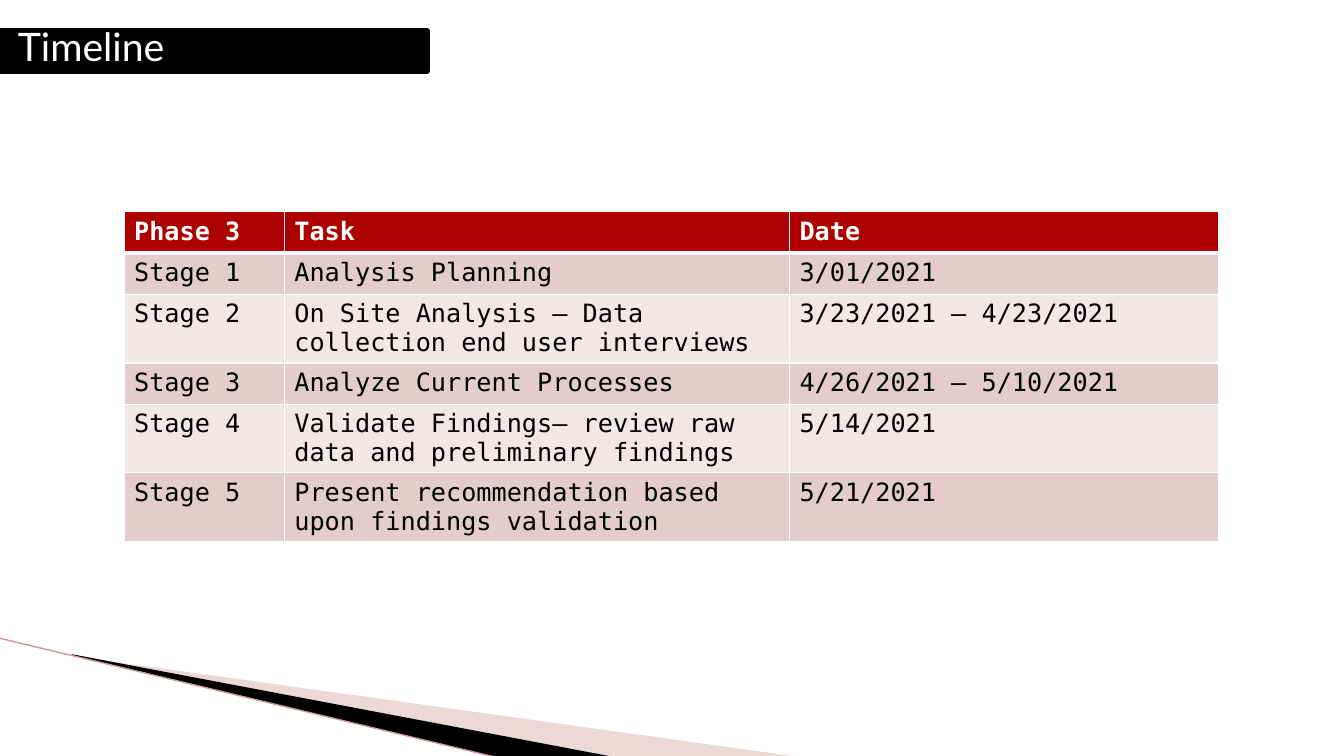
from lxml.etree import SubElement
from pptx import Presentation
from pptx.dml.color import RGBColor
from pptx.enum.shapes import MSO_CONNECTOR, MSO_SHAPE
from pptx.oxml.ns import qn
from pptx.util import Pt

TITLE = "Timeline"
ROWS = [
    ("Phase 3", "Task", "Date"),
    ("Stage 1", "Analysis Planning", "3/01/2021"),
    ("Stage 2", "On Site Analysis – Data collection end user interviews", "3/23/2021 – 4/23/2021"),
    ("Stage 3", "Analyze Current Processes", "4/26/2021 – 5/10/2021"),
    ("Stage 4", "Validate Findings– review raw data and preliminary findings", "5/14/2021"),
    ("Stage 5", "Present recommendation based upon findings validation", "5/21/2021"),
]
COLUMN_WIDTHS = [159, 501, 426]
ROW_HEIGHT = 41
TABLE_LEFT, TABLE_TOP = 123, 210
ROSE_WEDGE = [(73, 651), (793, 751), (608, 751), (73, 650)]
BLACK_WEDGE = [(71, 649), (609, 751), (496, 752), (72, 650)]
EDGE = [(-1, 633), (495, 752)]
COLORS = {
    "white": "FFFFFF",
    "black": "000000",
    "header": "AD0101",
    "odd": "E3CCCC",
    "even": "F1E7E7",
    "rose": "D29E9E",
    "edge": "CD9595",
}
SCALE = 9144


def px(length):
    return length * SCALE


def color(name):
    return RGBColor.from_string(COLORS[name])


def paint(shape, name):
    shape.shadow.inherit = False
    shape.fill.solid()
    shape.fill.fore_color.rgb = color(name)


def add_wedge(page, points, name):
    builder = page.shapes.build_freeform(*points[0], scale=SCALE)
    builder.add_line_segments(points[1:], close=True)
    wedge = builder.convert_to_shape()
    paint(wedge, name)
    wedge.line.fill.background()
    return wedge


def style_text(frame, size, font, name, bold=False):
    for para in frame.paragraphs:
        for span in para.runs:
            span.font.size = Pt(size)
            span.font.name = font
            span.font.bold = bold
            span.font.color.rgb = color(name)


def add_borders(cell, bottom):
    properties = cell._tc.get_or_add_tcPr()
    widths = {"a:lnL": 1, "a:lnR": 1, "a:lnT": 1, "a:lnB": bottom}
    for position, (tag, width) in enumerate(widths.items()):
        border = SubElement(properties, qn(tag), w=str(Pt(width)))
        fill = SubElement(border, qn("a:solidFill"))
        SubElement(fill, qn("a:srgbClr"), val=COLORS["white"])
        properties.insert(position, border)


def add_decoration(page):
    rose = add_wedge(page, ROSE_WEDGE, "rose")
    tone = rose.fill._xPr.find(qn("a:solidFill"))[0]
    SubElement(tone, qn("a:alpha"), val="40000")
    add_wedge(page, BLACK_WEDGE, "black")
    (x1, y1), (x2, y2) = EDGE
    edge = page.shapes.add_connector(MSO_CONNECTOR.STRAIGHT, px(x1), px(y1), px(x2), px(y2))
    edge.line.color.rgb = color("edge")
    edge.line.width = Pt(0.95)
    SubElement(edge._element.spPr, qn("a:effectLst"))


def add_schedule(page):
    table = page.shapes.add_table(
        len(ROWS), len(COLUMN_WIDTHS), px(TABLE_LEFT), px(TABLE_TOP),
        px(sum(COLUMN_WIDTHS)), px(ROW_HEIGHT * len(ROWS)),
    ).table
    for column, width in zip(table.columns, COLUMN_WIDTHS):
        column.width = px(width)
    for row_index, texts in enumerate(ROWS):
        header = row_index == 0
        fill = "header" if header else ("odd" if row_index % 2 else "even")
        for column_index, text in enumerate(texts):
            cell = table.cell(row_index, column_index)
            cell.text_frame.text = text
            style_text(cell.text_frame, 18, "DejaVu Sans Mono", "white" if header else "black", header)
            cell.fill.solid()
            cell.fill.fore_color.rgb = color(fill)
            add_borders(cell, 3 if header else 1)


def add_title(page):
    bar = page.shapes.add_shape(MSO_SHAPE.RECTANGLE, 0, px(31), px(424), px(39))
    paint(bar, "black")
    bar.line.color.rgb = color("black")
    bar.line.width = Pt(4.33)
    box = page.shapes.add_textbox(px(8), px(17), px(416), px(104))
    box.text_frame.word_wrap = True
    box.text_frame.text = TITLE
    style_text(box.text_frame, 28, "Lato", "white")


def main():
    deck = Presentation()
    deck.slide_width, deck.slide_height = px(1333), px(750)
    page = deck.slides.add_slide(deck.slide_layouts[6])
    add_decoration(page)
    add_schedule(page)
    add_title(page)
    deck.save("out.pptx")


if __name__ == "__main__":
    main()
